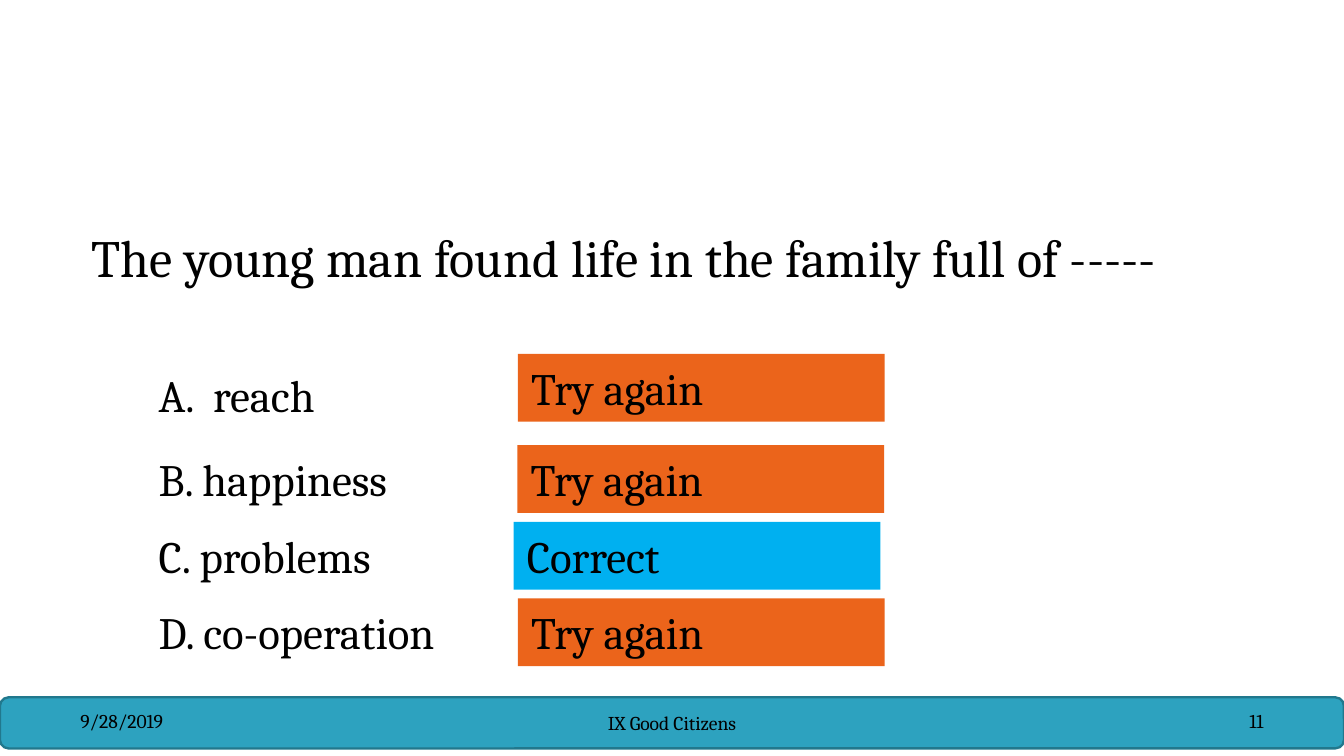
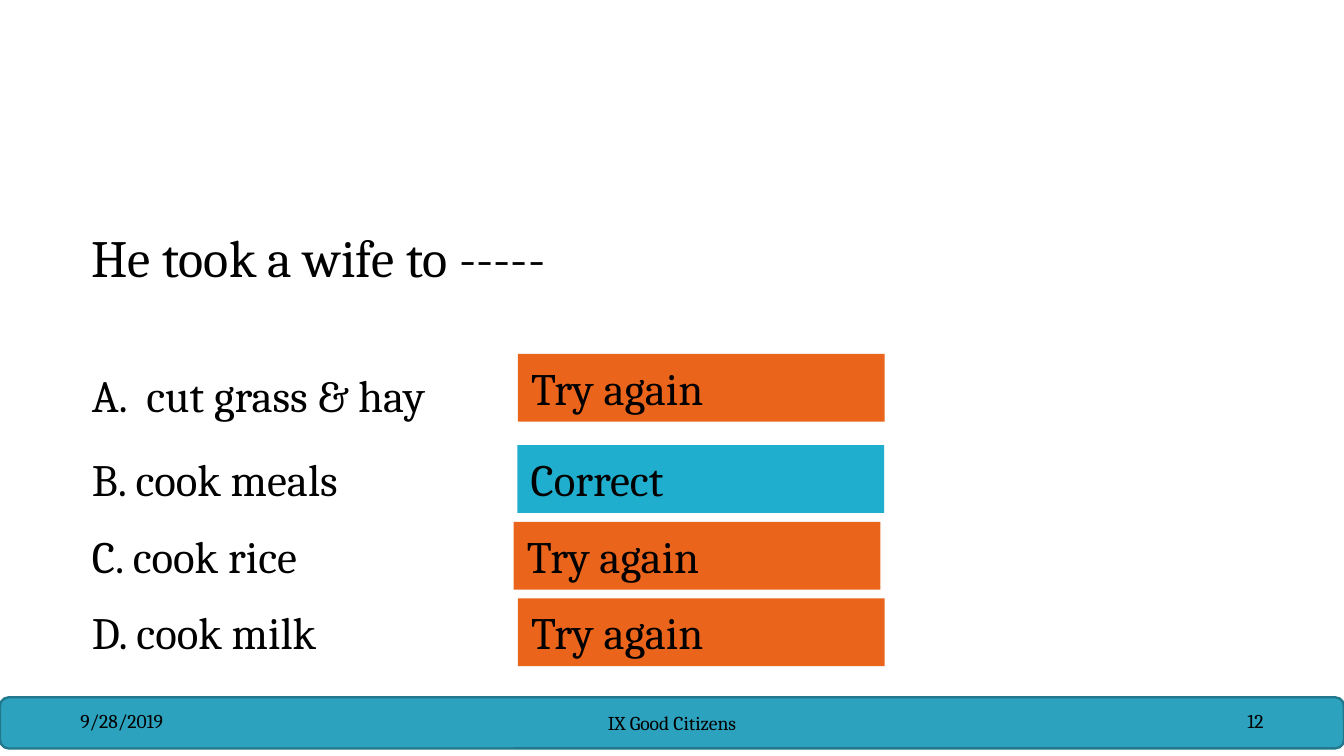
"""Build two multiple-choice quiz slides with a shared footer band."""
from pptx import Presentation
from pptx.dml.color import RGBColor
from pptx.enum.shapes import MSO_SHAPE
from pptx.enum.text import MSO_ANCHOR, MSO_AUTO_SIZE, PP_ALIGN
from pptx.util import Inches, Pt

RECT, ROUNDED = MSO_SHAPE.RECTANGLE, MSO_SHAPE.ROUNDED_RECTANGLE
TOP, MIDDLE, BOTTOM = MSO_ANCHOR.TOP, MSO_ANCHOR.MIDDLE, MSO_ANCHOR.BOTTOM
LEFT, CENTER, RIGHT = PP_ALIGN.LEFT, PP_ALIGN.CENTER, PP_ALIGN.RIGHT
GROW, FIXED = MSO_AUTO_SIZE.SHAPE_TO_FIT_TEXT, MSO_AUTO_SIZE.NONE

WIDTH = 10
HEIGHT = WIDTH * 9 / 16
FONT, INK = "Cambria", "000000"
BAND_FILL, BAND_EDGE = "2DA2BF", "21788D"
WRONG_FILL = "EB641B"
QUESTION_SIZE, ANSWER_SIZE, FOOTER_SIZE = 28, 24, 10.5
ROW_HEIGHT, ROW_PITCH, SECOND_ROW = 8.97, 10.13, 58.9
FIRST_LABEL, FIRST_VERDICT = 47.82, 46.8
VERDICT_LEFTS, VERDICT_WIDTH = (38.53, 38.5, 38.22, 38.53), 27.3

QUIZZES = [
    {"number": "11", "indent": 10.82, "correct": 2, "correct_fill": "00B0F0",
     "question": "The young man found life in the family full of -----",
     "answers": [("A.  reach", 27.3), ("B. happiness", 23.6),
                 ("C. problems", 27.4), ("D. co-operation", 31.1)]},
    {"number": "12", "indent": 5.85, "correct": 1, "correct_fill": "1FAECD",
     "question": "He took a wife to -----",
     "answers": [("A.  cut grass & hay", 31), ("B. cook meals", 23.6),
                 ("C. cook rice", 27.4), ("D. cook milk", 31.1)]},
]


def color(hex_code):
    """Turn a hex string into a colour."""
    return RGBColor.from_string(hex_code)


def area(left, top, width, height):
    """Turn percentages of the slide into lengths."""
    return (Inches(left * WIDTH / 100), Inches(top * HEIGHT / 100),
            Inches(width * WIDTH / 100), Inches(height * HEIGHT / 100))


def write(shape, words, size, align=LEFT, anchor=TOP, fit=GROW):
    """Put one line of styled text into a shape."""
    frame = shape.text_frame
    frame.word_wrap = True
    frame.auto_size = fit
    frame.vertical_anchor = anchor
    paragraph = frame.paragraphs[0]
    paragraph.alignment = align
    run = paragraph.add_run()
    run.text = words
    run.font.name = FONT
    run.font.size = Pt(size)
    run.font.color.rgb = color(INK)


def add_label(slide, place, words, size, **style):
    """Add a text box."""
    write(slide.shapes.add_textbox(*area(*place)), words, size, **style)


def add_block(slide, kind, place, fill, edge=None):
    """Add a filled shape, outlined if an edge colour is given."""
    block = slide.shapes.add_shape(kind, *area(*place))
    block.shadow.inherit = False
    block.fill.solid()
    block.fill.fore_color.rgb = color(fill)
    if edge:
        block.line.color.rgb = color(edge)
        block.line.width = Pt(1.25)
    else:
        block.line.fill.background()
    return block


def add_footer(slide, number):
    """Add the band with date, lesson title and slide number."""
    add_block(slide, ROUNDED, (0, 92.25, 100, 6.76), BAND_FILL, BAND_EDGE)
    for words, left, width, align, anchor in (
            ("9/28/2019", 5, 23.3, LEFT, MIDDLE),
            ("IX Good Citizens", 34.17, 31.67, CENTER, BOTTOM),
            (number, 71.7, 23.3, RIGHT, MIDDLE)):
        add_label(slide, (left, 92.7, width, 5.33), words, FOOTER_SIZE,
                  align=align, anchor=anchor, fit=FIXED)


def add_answer(slide, row, quiz):
    """Add one answer and its verdict."""
    words, width = quiz["answers"][row]
    label_top = verdict_top = SECOND_ROW + (row - 1) * ROW_PITCH
    if row == 0:
        label_top, verdict_top = FIRST_LABEL, FIRST_VERDICT
    add_label(slide, (quiz["indent"], label_top, width, ROW_HEIGHT),
              words, ANSWER_SIZE)
    is_correct = row == quiz["correct"]
    verdict = add_block(
        slide, RECT,
        (VERDICT_LEFTS[row], verdict_top, VERDICT_WIDTH, ROW_HEIGHT),
        quiz["correct_fill"] if is_correct else WRONG_FILL)
    write(verdict, "Correct" if is_correct else "Try again", ANSWER_SIZE)


def add_quiz(deck, quiz):
    """Add one quiz slide."""
    slide = deck.slides.add_slide(deck.slide_layouts[6])
    add_footer(slide, quiz["number"])
    add_label(slide, (5.83, 28.9, 87.5, 10.13), quiz["question"],
              QUESTION_SIZE)
    for row in range(len(quiz["answers"])):
        add_answer(slide, row, quiz)


def main():
    """Build and save the deck."""
    deck = Presentation()
    deck.slide_width, deck.slide_height = Inches(WIDTH), Inches(HEIGHT)
    for quiz in QUIZZES:
        add_quiz(deck, quiz)
    deck.save("out.pptx")


if __name__ == "__main__":
    main()
